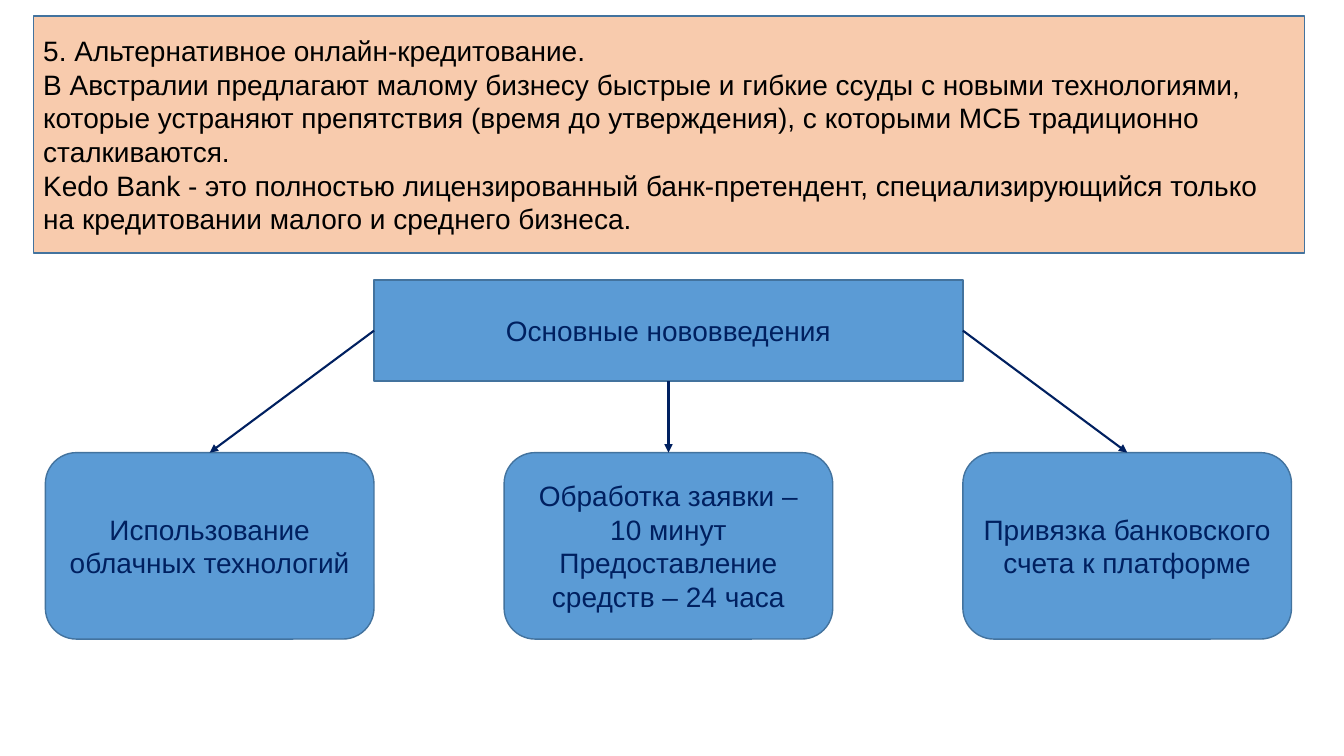
from lxml.etree import SubElement
from pptx import Presentation
from pptx.dml.color import RGBColor
from pptx.enum.shapes import MSO_CONNECTOR, MSO_SHAPE
from pptx.enum.text import MSO_ANCHOR, PP_ALIGN
from pptx.oxml.ns import qn
from pptx.util import Inches, Pt

PEACH = RGBColor(0xF8, 0xCB, 0xAD)
BLUE = RGBColor(0x5B, 0x9B, 0xD5)
EDGE = RGBColor(0x43, 0x73, 0x9E)
NAVY = RGBColor(0x00, 0x20, 0x60)
BLACK = RGBColor(0x00, 0x00, 0x00)

INTRO = [
    "5. Альтернативное онлайн-кредитование.",
    "В Австралии предлагают малому бизнесу быстрые и гибкие ссуды с новыми "
    "технологиями, которые устраняют препятствия (время до утверждения), "
    "с которыми МСБ традиционно сталкиваются.",
    "Kedo Bank - это полностью лицензированный банк-претендент, "
    "специализирующийся только на кредитовании малого и среднего бизнеса.",
]
ITEMS = [
    ["Использование облачных технологий"],
    ["Обработка заявки – 10 минут", "Предоставление средств – 24 часа"],
    ["Привязка банковского счета к платформе"],
]


class Chart:
    """Draws styled boxes and arrows on one slide."""

    font = "Arial"
    size = Pt(20)

    def __init__(self, slide):
        self.slide = slide

    def box(self, area, lines, kind=MSO_SHAPE.RECTANGLE, fill=BLUE,
            ink=NAVY, align=PP_ALIGN.CENTER):
        shape = self.slide.shapes.add_shape(kind, *map(Inches, area))
        shape.shadow.inherit = False
        shape.fill.solid()
        shape.fill.fore_color.rgb = fill
        shape.line.color.rgb = EDGE
        shape.line.width = Pt(1)
        frame = shape.text_frame
        frame.word_wrap = True
        frame.vertical_anchor = MSO_ANCHOR.MIDDLE
        for i, line in enumerate(lines):
            para = frame.add_paragraph() if i else frame.paragraphs[0]
            para.alignment = align
            run = para.add_run()
            run.text = line
            run.font.name = self.font
            run.font.size = self.size
            run.font.color.rgb = ink
        return shape

    def arrow(self, start, side, end):
        link = self.slide.shapes.add_connector(MSO_CONNECTOR.STRAIGHT, 0, 0, 0, 0)
        link.begin_connect(start, side)
        link.end_connect(end, 0)
        link.line.color.rgb = NAVY
        link.line.width = Pt(1.5)
        SubElement(link.line._get_or_add_ln(), qn("a:tailEnd"), type="triangle")
        SubElement(link._element.spPr, qn("a:effectLst"))


def main():
    deck = Presentation()
    deck.slide_width = Inches(13.33)
    deck.slide_height = Inches(7.5)
    chart = Chart(deck.slides.add_slide(deck.slide_layouts[6]))
    chart.box((0.33, 0.16, 12.61, 2.35), INTRO, fill=PEACH, ink=BLACK,
              align=PP_ALIGN.LEFT)
    head = chart.box((3.71, 2.78, 5.84, 1), ["Основные нововведения"])
    for i, (lines, side) in enumerate(zip(ITEMS, (1, 2, 3))):
        item = chart.box((0.45 + 4.55 * i, 4.49, 3.26, 1.85), lines,
                         MSO_SHAPE.ROUNDED_RECTANGLE)
        chart.arrow(head, side, item)
    deck.save("out.pptx")


if __name__ == "__main__":
    main()
